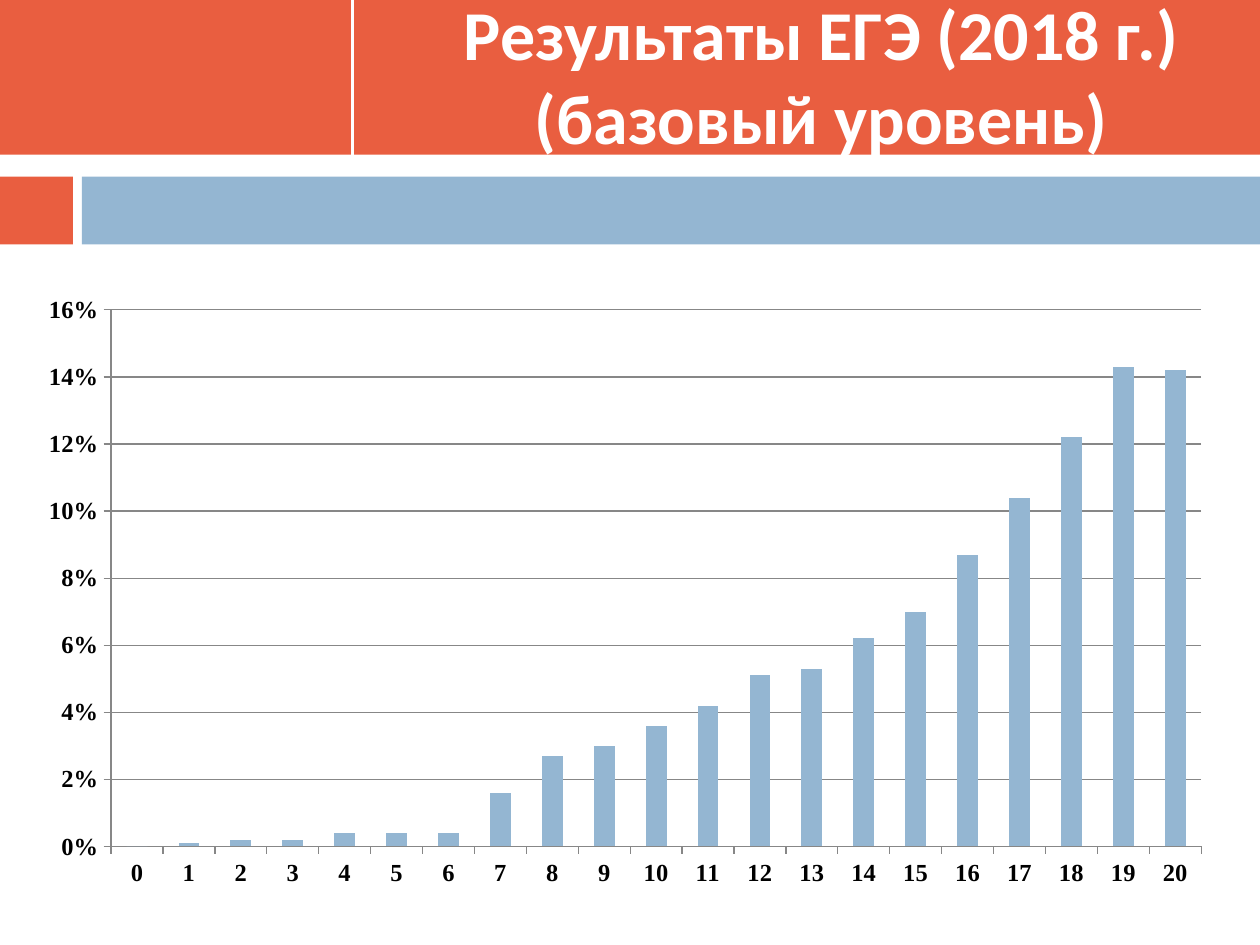
from lxml import etree
from pptx import Presentation
from pptx import util as u
from pptx.chart.data import CategoryChartData
from pptx.dml.color import RGBColor
from pptx.enum import chart as ch, shapes, text
from pptx.oxml.ns import qn

ORANGE = RGBColor(0xE9, 0x5E, 0x40)
BLUE = RGBColor(0x94, 0xB6, 0xD2)
WHITE = RGBColor(0xFF, 0xFF, 0xFF)
BLACK = RGBColor(0, 0, 0)
GRAY = RGBColor(0x87, 0x87, 0x87)

WIDTH, HEIGHT = 25.4, 19.05
HEADER_H = 3.12
BAND_TOP, BAND_H = 3.56, 1.37
BAND_LEFT = 1.65

SHARES = [0, 0.001, 0.002, 0.002, 0.004, 0.004, 0.004, 0.016, 0.027, 0.03,
          0.036, 0.042, 0.051, 0.053, 0.062, 0.07, 0.087, 0.104, 0.122,
          0.143, 0.142]


class Deck:
    """Style and current slide; lengths are in centimetres."""
    title_font = "Calibri"
    chart_font = "Times New Roman"

    def __init__(self):
        self.prs = Presentation()
        self.prs.slide_width = u.Cm(WIDTH)
        self.prs.slide_height = u.Cm(HEIGHT)
        self.s = self.prs.slides.add_slide(self.prs.slide_layouts[6])

    def rect(self, x, y, w, h, color):
        sp = self.s.shapes.add_shape(shapes.MSO_SHAPE.RECTANGLE,
                                     *map(u.Cm, (x, y, w, h)))
        sp.shadow.inherit = False
        sp.fill.solid()
        sp.fill.fore_color.rgb = color
        sp.line.fill.background()

    def line(self, x1, y1, x2, y2, color, width):
        cx = self.s.shapes.add_connector(shapes.MSO_CONNECTOR.STRAIGHT,
                                         *map(u.Cm, (x1, y1, x2, y2)))
        cx.line.color.rgb = color
        cx.line.width = u.Pt(width)
        etree.SubElement(cx._element.spPr, qn("a:effectLst"))

    def title(self, x, y, w, h, lines, size):
        tf = self.s.shapes.add_textbox(*map(u.Cm, (x, y, w, h))).text_frame
        tf.word_wrap = True
        tf.vertical_anchor = text.MSO_ANCHOR.MIDDLE
        p = tf.paragraphs[0]
        p.alignment = text.PP_ALIGN.CENTER
        for i, line in enumerate(lines):
            if i:
                p.add_line_break()
            r = p.add_run()
            r.text = line
            r.font.name = self.title_font
            r.font.size = u.Pt(size)
            r.font.bold = True
            r.font.color.rgb = WHITE

    def set_chart_font(self, font, size, bold):
        font.name = self.chart_font
        font.size = u.Pt(size)
        font.bold = bold
        font.color.rgb = BLACK

    def columns(self, x, y, w, h, values, color):
        data = CategoryChartData(number_format="0.0%")
        data.categories = [str(score) for score in range(len(values))]
        data.add_series("Series 1", values)
        chart = self.s.shapes.add_chart(ch.XL_CHART_TYPE.COLUMN_CLUSTERED,
                                        *map(u.Cm, (x, y, w, h)), data).chart
        chart.has_title = False
        chart.has_legend = False
        self.set_chart_font(chart.font, 12, False)
        for axis in (chart.category_axis, chart.value_axis):
            axis.major_tick_mark = ch.XL_TICK_MARK.OUTSIDE
            axis.format.line.color.rgb = GRAY
            self.set_chart_font(axis.tick_labels.font, 14, True)
        axis = chart.value_axis
        axis.minimum_scale, axis.maximum_scale, axis.major_unit = 0, 0.16, 0.02
        axis.has_major_gridlines = True
        axis.major_gridlines.format.line.color.rgb = GRAY
        axis.tick_labels.number_format = "0%"
        axis.tick_labels.number_format_is_linked = False
        plot = chart.plots[0]
        plot.gap_width = 150
        plot.vary_by_categories = False
        fill = plot.series[0].format.fill
        fill.solid()
        fill.fore_color.rgb = color


def main():
    deck = Deck()
    deck.rect(0, 0, WIDTH, HEADER_H, ORANGE)
    deck.rect(0, BAND_TOP, 1.47, BAND_H, ORANGE)
    deck.rect(BAND_LEFT, BAND_TOP, WIDTH - BAND_LEFT, BAND_H, BLUE)
    deck.line(7.1, 0, 7.1, HEADER_H, WHITE, 1.5)
    deck.title(7.7, 0.13, 17.7, 2.74,
               ["Результаты ЕГЭ (2018 г.)", "(базовый уровень)"], 40)
    deck.columns(0.5, 5.72, 24.2, 12.4, SHARES, BLUE)
    deck.prs.save("out.pptx")


if __name__ == "__main__":
    main()
